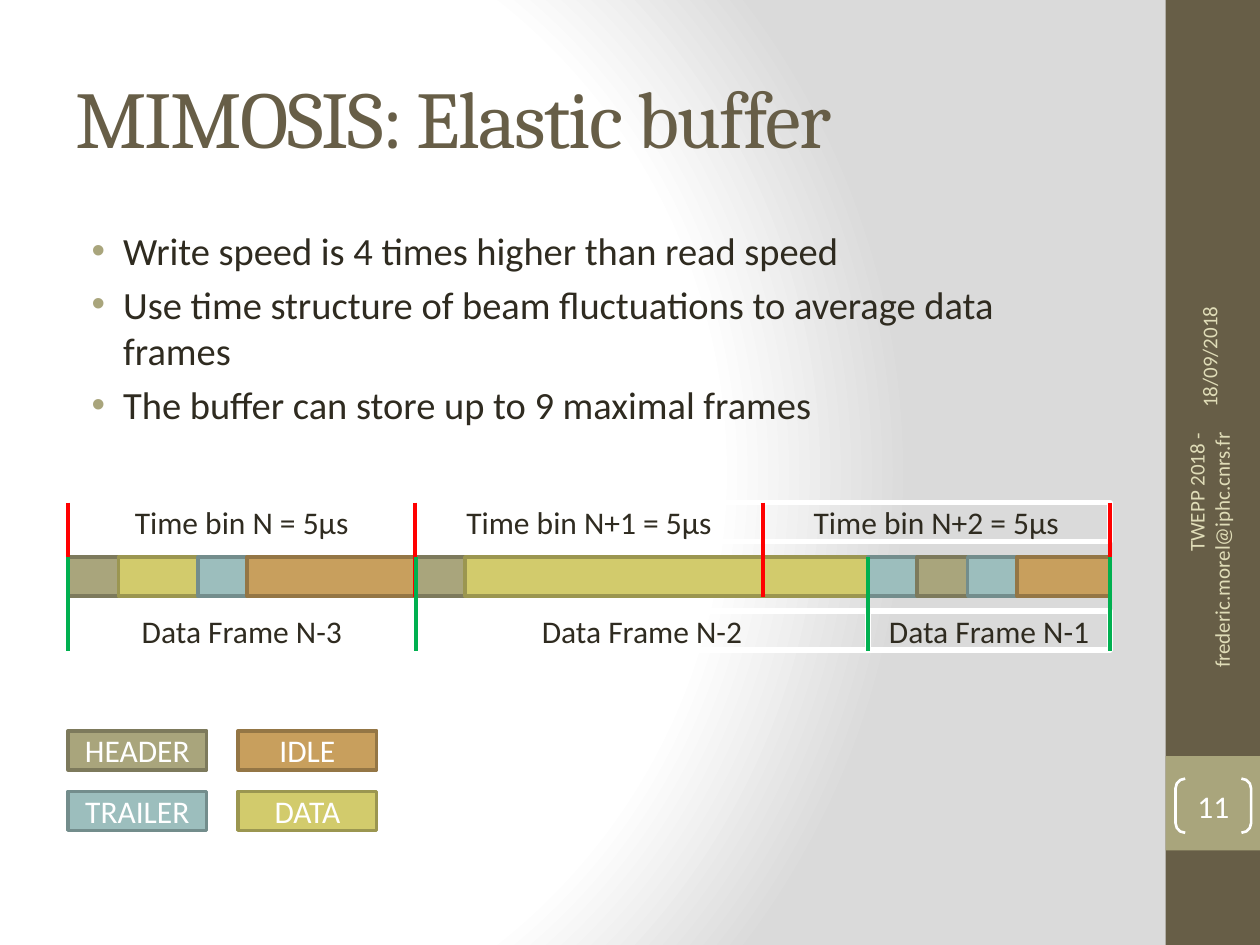
from itertools import pairwise

from pptx import Presentation
from pptx.dml.color import RGBColor
from pptx.enum.shapes import MSO_CONNECTOR as Connector, MSO_SHAPE as Shape
from pptx.enum.text import MSO_ANCHOR as Anchor, PP_ALIGN as Align
from pptx.oxml import parse_xml
from pptx.oxml.ns import nsdecls
from pptx.util import Inches, Pt

COLORS = {
    "white": "FFFFFF", "grey": "DADADA", "brown": "675E47", "olive": "A9A57C",
    "ink": "2F2B20", "cream": "DFDCB7", "red": "FF0000", "green": "00B050",
    "header": "A9A57C", "header_edge": "7D7A5C",
    "data": "D2CB6C", "data_edge": "9B9650",
    "trailer": "9CBEBD", "trailer_edge": "738D8C",
    "idle": "C89F5D", "idle_edge": "947645",
}

TITLE = "MIMOSIS: Elastic buffer"
BULLETS = [
    "Write speed is 4 times higher than read speed",
    "Use time structure of beam fluctuations to average data frames",
    "The buffer can store up to 9 maximal frames",
]
SIDE_TEXTS = [  # text, left, top, width, alignment
    ("18/09/2018", 8.26, 1.8, 2.67, Align.LEFT),
    ("TWEPP 2018 - frederic.morel@iphc.cnrs.fr", 8.3, 4.43, 2.59, Align.RIGHT),
]
PAGE_NUMBER = "11"
LEGEND = [["header", "idle"], ["trailer", "data"]]
TIME_BINS = ["Time bin N = 5µs", "Time bin N+1 = 5µs", "Time bin N+2 = 5µs"]
FRAMES = ["Data Frame N-3", "Data Frame N-2", "Data Frame N-1"]
SEGMENTS = [  # kind, start
    ("header", 0.54), ("data", 0.94), ("trailer", 1.57), ("idle", 1.96),
    ("header", 3.3), ("data", 3.69),
    ("trailer", 6.89), ("header", 7.28), ("trailer", 7.68), ("idle", 8.07),
]

START, END = 0.54, 8.81
BIN_EDGES = [START + i * (END - START) / 3 for i in range(4)]
FRAME_EDGES = [START, 3.3, 6.89, END]
BIN_TOP, BAR_TOP, FRAME_TOP = 3.99, 4.42, 4.85
BAR_HEIGHT, MARK_HEIGHT = 0.31, 0.75


def rgb(name):
    return RGBColor.from_string(COLORS[name])


def write(box, lines, size, color, font="Calibri", align=Align.LEFT,
          anchor=Anchor.MIDDLE):
    frame = box.text_frame
    frame.word_wrap = True
    frame.vertical_anchor = anchor
    for i, line in enumerate(lines):
        para = frame.paragraphs[0] if i == 0 else frame.add_paragraph()
        para.alignment = align
        span = para.add_run()
        span.text = line
        for name, value in {"size": Pt(size), "name": font}.items():
            setattr(span.font, name, value)
        span.font.color.rgb = rgb(color)
    return frame


def add_text(page, at, lines, size, color, **style):
    box = page.shapes.add_textbox(*map(Inches, at))
    write(box, lines, size, color, **style)
    return box


def add_box(shapes, at, fill=None, line=None, width=2, kind=Shape.RECTANGLE):
    box = shapes.add_shape(kind, *map(Inches, at))
    box.shadow.inherit = False
    if fill:
        box.fill.solid()
        box.fill.fore_color.rgb = rgb(fill)
    else:
        box.fill.background()
    if line:
        box.line.color.rgb = rgb(line)
        box.line.width = Pt(width)
    else:
        box.line.fill.background()
    return box


def add_mark(shapes, x, top, color):
    mark = shapes.add_connector(Connector.STRAIGHT, Inches(x), Inches(top),
                                Inches(x), Inches(top + MARK_HEIGHT))
    mark.line.color.rgb = rgb(color)
    mark.line.width = Pt(2.25)
    mark.element.spPr.append(parse_xml(f"<a:effectLst {nsdecls('a')}/>"))


def add_background(page):
    stops = "".join(
        f'<a:gs pos="{pos * 1000}"><a:srgbClr val="{COLORS[name]}"/></a:gs>'
        for pos, name in [(0, "white"), (75, "white"), (100, "grey")])
    page.element.cSld.insert(0, parse_xml(
        f'<p:bg {nsdecls("p", "a")}><p:bgPr><a:gradFill rotWithShape="1">'
        f'<a:gsLst>{stops}</a:gsLst><a:path path="circle">'
        '<a:fillToRect l="20000" t="50000" r="100000" b="50000"/></a:path>'
        '</a:gradFill><a:effectLst/></p:bgPr></p:bg>'))


def add_sidebar(page):
    add_box(page.shapes, (9.25, 0, 0.75, 7.5), "brown")
    add_box(page.shapes, (9.25, 6, 0.75, 0.75), "olive")
    for text, left, top, width, align in SIDE_TEXTS:
        box = add_text(page, (left, top, width, 0.4), [text], 12, "cream",
                       align=align)
        box.rotation = 270
    bracket = add_box(page.shapes, (9.33, 6.18, 0.6, 0.43), line="white",
                      width=1.5, kind=Shape.DOUBLE_BRACKET)
    bracket.adjustments[0] = 0.179
    frame = write(bracket, [PAGE_NUMBER], 18, "white", align=Align.CENTER)
    for side in ("left", "top", "right", "bottom"):
        setattr(frame, f"margin_{side}", 0)


def add_heading_and_bullets(page):
    title = add_text(page, (0.5, 0.3, 8.33, 1.25), [TITLE], 46, "brown",
                     font="Cambria")
    title.text_frame.paragraphs[0].runs[0].font._element.set("spc", "-100")
    body = add_text(page, (0.5, 1.75, 8.33, 2.31), BULLETS, 22, "ink",
                    anchor=Anchor.TOP)
    for i, para in enumerate(body.text_frame.paragraphs):
        para.space_before = Pt(4.4 if i else 0)
        props = para._p.get_or_add_pPr()
        props.set("marL", str(Inches(0.38)))
        props.set("indent", str(Inches(-0.25)))
        for xml in (
            f'<a:buClr {nsdecls("a")}><a:srgbClr val="{COLORS["olive"]}"/></a:buClr>',
            f'<a:buFont {nsdecls("a")} typeface="Arial"/>',
            f'<a:buChar {nsdecls("a")} char="•"/>',
        ):
            props.append(parse_xml(xml))


def add_legend(page):
    shapes = page.shapes.add_group_shape().shapes
    for row, kinds in enumerate(LEGEND):
        for column, kind in enumerate(kinds):
            at = (START + column * 1.35, 5.8 + row * 0.48, 1.1, BAR_HEIGHT)
            box = add_box(shapes, at, kind, f"{kind}_edge")
            write(box, [kind.upper()], 18, "white", align=Align.CENTER)


def add_timeline(page):
    shapes = page.shapes.add_group_shape().shapes
    for labels, edges, top in [(FRAMES, FRAME_EDGES, FRAME_TOP),
                               (TIME_BINS, BIN_EDGES, BIN_TOP)]:
        for label, (left, right) in zip(labels, pairwise(edges)):
            box = add_box(shapes, (left, top, right - left, BAR_HEIGHT),
                          line="white", width=3)
            write(box, [label], 18, "ink", align=Align.CENTER)
    stops = [start for _, start in SEGMENTS[1:]] + [END]
    for (kind, start), stop in zip(SEGMENTS, stops):
        add_box(shapes, (start, BAR_TOP, stop - start, BAR_HEIGHT),
                kind, f"{kind}_edge")
    for edges, top, color in [(BIN_EDGES, BIN_TOP, "red"),
                              (FRAME_EDGES, BAR_TOP, "green")]:
        for x in edges:
            add_mark(shapes, x, top, color)


def main():
    deck = Presentation()
    deck.slide_width, deck.slide_height = Inches(10), Inches(7.5)
    page = deck.slides.add_slide(deck.slide_layouts[6])
    for add_part in (add_background, add_sidebar, add_heading_and_bullets,
                     add_legend, add_timeline):
        add_part(page)
    deck.save("out.pptx")


if __name__ == "__main__":
    main()
